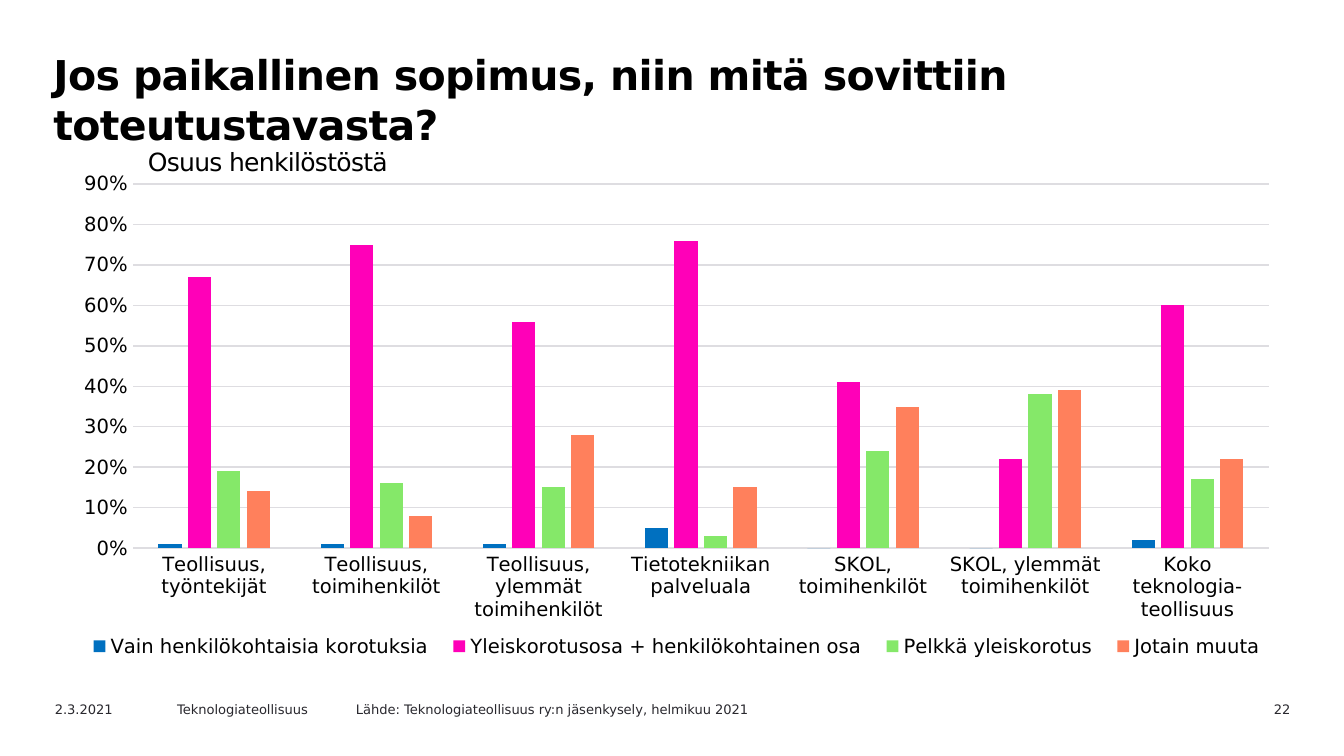
import pptx
import pptx.chart.data
import pptx.dml.color
import pptx.enum.chart
import pptx.enum.text
import pptx.oxml
import pptx.oxml.ns
import pptx.util

Inches = pptx.util.Inches
Pt = pptx.util.Pt
ALIGN = pptx.enum.text.PP_ALIGN

COLORS = {
    "black": "000000",
    "ink": "29282E",
    "grid": "DEDDE1",
    "blue": "0070C0",
    "pink": "FF00B8",
    "green": "85E869",
    "orange": "FF805C",
}


class SlideBuilder:
    """Holds the style and the current slide."""

    font_name = "DejaVu Sans"

    def __init__(self, deck):
        self.slide = deck.slides.add_slide(deck.slide_layouts[6])

    def color(self, name):
        return pptx.dml.color.RGBColor.from_string(COLORS[name])

    def style_font(self, font, size, color, bold=False):
        values = {"name": self.font_name, "size": Pt(size), "bold": bold}
        for attribute, value in values.items():
            setattr(font, attribute, value)
        font.color.rgb = self.color(color)

    def style_line(self, line):
        line.color.rgb = self.color("grid")
        line.width = Pt(0.75)

    def text(self, words, box, size, color="ink", bold=False, inset=None,
             spacing=None, indent=0, **paragraph_format):
        frame = self.slide.shapes.add_textbox(*map(Inches, box)).text_frame
        frame.word_wrap = True
        if inset is not None:
            for side in ("left", "top", "right", "bottom"):
                setattr(frame, f"margin_{side}", Inches(inset))
        paragraph = frame.paragraphs[0]
        for attribute, value in paragraph_format.items():
            setattr(paragraph, attribute, value)
        if indent:
            paragraph._p.get_or_add_pPr().set("marL", str(Inches(indent)))
        run = paragraph.add_run()
        run.text = words
        self.style_font(run.font, size, color, bold)
        if spacing is not None:
            # Letter spacing, in hundredths of a point
            run._r.get_or_add_rPr().set("spc", str(round(spacing * 100)))

    def manual_layout(self, area, chart_size, mode=""):
        """Layout element for an area in inches, stored as chart fractions."""
        settings = "".join(f'<c:{tag} val="{value / full}"/>' for tag, value, full
                           in zip("xywh", area, chart_size * 2))
        return pptx.oxml.parse_xml(
            f'<c:layout {pptx.oxml.ns.nsdecls("c")}><c:manualLayout>{mode}'
            f'<c:xMode val="edge"/><c:yMode val="edge"/>{settings}'
            "</c:manualLayout></c:layout>")

    def column_chart(self, box, categories, series, plot_area, legend_area):
        data = pptx.chart.data.CategoryChartData(number_format="0%")
        data.categories = categories
        for name, _, values in series:
            data.add_series(name, values)
        kind = pptx.enum.chart.XL_CHART_TYPE.COLUMN_CLUSTERED
        chart = self.slide.shapes.add_chart(kind, *map(Inches, box), data).chart
        chart.has_title = False
        self.style_font(chart.font, 10, "ink")

        # Columns
        plot = chart.plots[0]
        for attribute, value in {"gap_width": 219, "overlap": -27,
                                 "vary_by_categories": False}.items():
            setattr(plot, attribute, value)
        for columns, (_, color, _) in zip(plot.series, series):
            columns.format.fill.solid()
            columns.format.fill.fore_color.rgb = self.color(color)
            columns.invert_if_negative = False

        # Axes
        for axis in (chart.category_axis, chart.value_axis):
            axis.major_tick_mark = pptx.enum.chart.XL_TICK_MARK.NONE
            axis.minor_tick_mark = pptx.enum.chart.XL_TICK_MARK.NONE
            self.style_font(axis.tick_labels.font, 10.5, "black")
        self.style_line(chart.category_axis.format.line)
        percent = chart.value_axis
        for attribute, value in {"minimum_scale": 0, "maximum_scale": 0.9,
                                 "major_unit": 0.1,
                                 "has_major_gridlines": True}.items():
            setattr(percent, attribute, value)
        percent.tick_labels.number_format = "0%"
        percent.tick_labels.number_format_is_linked = False
        percent.format.line.fill.background()
        self.style_line(percent.major_gridlines.format.line)

        # Legend
        chart.has_legend = True
        chart.legend.position = pptx.enum.chart.XL_LEGEND_POSITION.BOTTOM
        chart.legend.include_in_layout = False
        self.style_font(chart.legend.font, 10.5, "black")

        # Places of the inner plot area and the legend
        layout_tag = pptx.oxml.ns.qn("c:layout")
        plot_node = chart._chartSpace.chart.plotArea
        legend_node = chart.legend._element
        for node in (plot_node, legend_node):
            for old_layout in node.findall(layout_tag):
                node.remove(old_layout)
        plot_node.insert(0, self.manual_layout(
            plot_area, box[2:], '<c:layoutTarget val="inner"/>'))
        legend_node.find(pptx.oxml.ns.qn("c:legendPos")).addnext(
            self.manual_layout(legend_area, box[2:]))


CATEGORIES = [
    "Teollisuus, työntekijät",
    "Teollisuus, toimihenkilöt",
    "Teollisuus, ylemmät toimihenkilöt",
    "Tietotekniikan palveluala",
    "SKOL, toimihenkilöt",
    "SKOL, ylemmät toimihenkilöt",
    "Koko\nteknologia-\nteollisuus",
]
SERIES = [
    ("Vain henkilökohtaisia korotuksia", "blue",
     [0.01, 0.01, 0.01, 0.05, 0, 0, 0.02]),
    ("Yleiskorotusosa + henkilökohtainen osa", "pink",
     [0.67, 0.75, 0.56, 0.76, 0.41, 0.22, 0.6]),
    ("Pelkkä yleiskorotus", "green",
     [0.19, 0.16, 0.15, 0.03, 0.24, 0.38, 0.17]),
    ("Jotain muuta", "orange",
     [0.14, 0.08, 0.28, 0.15, 0.35, 0.39, 0.22]),
]
# Words, left, width, alignment
FOOTER = [
    ("2.3.2021", 0.31, 1, ALIGN.LEFT),
    ("Teknologiateollisuus", 1.22, 1.42, ALIGN.LEFT),
    ("Lähde: Teknologiateollisuus ry:n jäsenkysely, helmikuu 2021",
     2.55, 3.71, ALIGN.LEFT),
    ("22", 8.76, 0.94, ALIGN.RIGHT),
]


def main():
    deck = pptx.Presentation()
    # Widescreen, 16:9
    deck.slide_width, deck.slide_height = Inches(10), Inches(10 * 9 / 16)
    builder = SlideBuilder(deck)

    # Title
    builder.text("Jos paikallinen sopimus, niin mitä sovittiin toteutustavasta?",
                 (0.28, 0.31, 8.74, 0.71), 22, "black", bold=True,
                 spacing=-0.34, indent=0.02, line_spacing=Pt(27))

    # Chart and its heading
    builder.column_chart((0.42, 1.21, 9.18, 3.87), CATEGORIES, SERIES,
                         plot_area=(0.57, 0.16, 8.45, 2.71),
                         legend_area=(0.14, 3.48, 8.95, 0.24))
    builder.text("Osuus henkilöstöstä", (1.06, 1.05, 2.2, 0.31), 13.4, "black",
                 inset=0.04, spacing=-0.4)

    # Footer
    for words, left, width, alignment in FOOTER:
        builder.text(words, (left, 5.17, width, 0.18), 7, alignment=alignment)

    deck.save("out.pptx")


if __name__ == "__main__":
    main()
